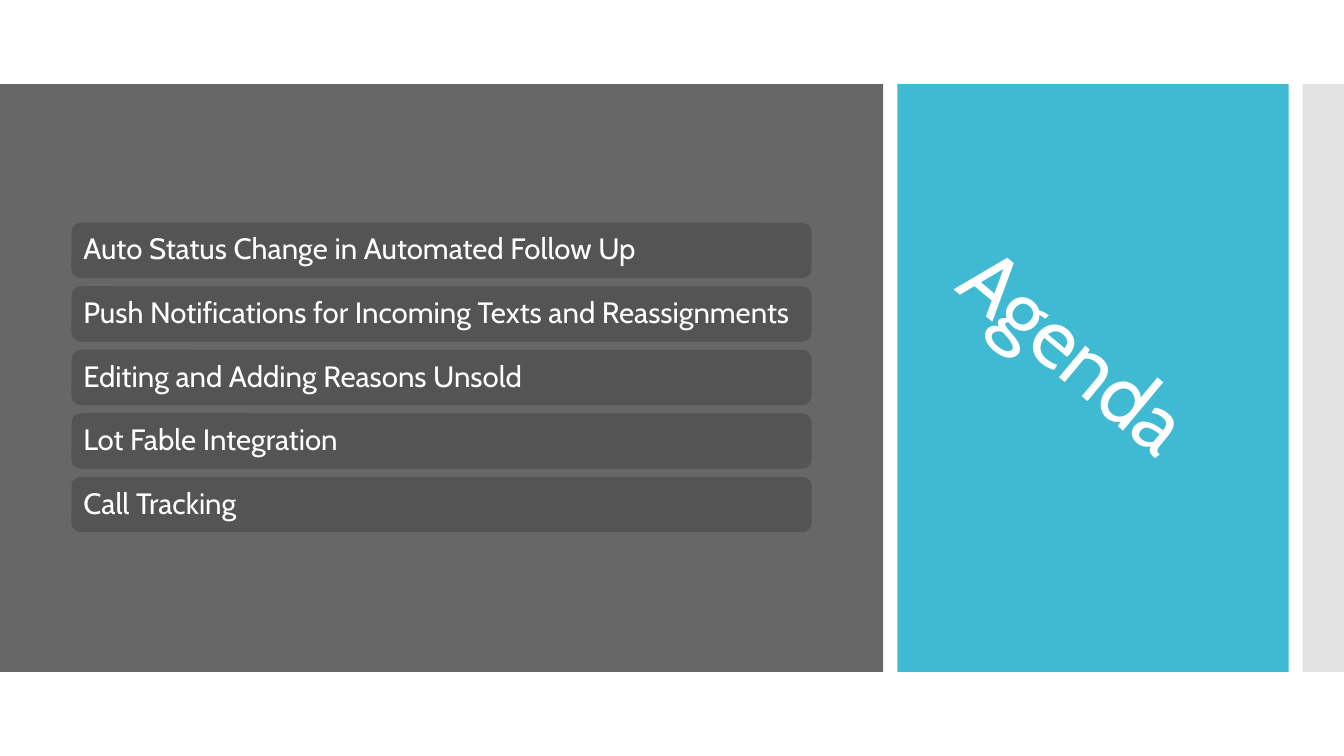
from dataclasses import dataclass

from lxml.etree import SubElement
from pptx import Presentation
from pptx.dml.color import RGBColor
from pptx.enum.shapes import MSO_SHAPE as Preset
from pptx.enum.text import MSO_ANCHOR as Anchor, PP_ALIGN as Align
from pptx.oxml.ns import qn
from pptx.shapes.autoshape import Shape
from pptx.slide import Slide
from pptx.util import Inches, Pt

SLIDE_WIDTH, SLIDE_HEIGHT = 13.33, 7.5
BAND_TOP, BAND_HEIGHT = SLIDE_HEIGHT / 9, SLIDE_HEIGHT * 7 / 9
TOPIC_LEFT, TOPIC_TOP = 0.71, 2.21
TOPIC_WIDTH, TOPIC_HEIGHT, TOPIC_PITCH = 7.34, 0.55, 0.63
WHITE, FONT = "FFFFFF", "Cabin"


@dataclass(frozen=True)
class Panel:
    left: float
    width: float
    color: str
    opacity: int = 100


PANELS = [
    Panel(0, 8.76, "676767"),
    Panel(8.9, 3.88, "40BAD2"),
    Panel(12.92, SLIDE_WIDTH - 12.92, "C8C8C8", 50),
]
TOPICS = [
    "Auto Status Change in Automated Follow Up",
    "Push Notifications for Incoming Texts and Reassignments",
    "Editing and Adding Reasons Unsold",
    "Lot Fable Integration",
    "Call Tracking",
]


def rgb(color: str) -> RGBColor:
    return RGBColor.from_string(color)


def add_block(slide: Slide, preset: Preset, left: float, top: float,
              width: float, height: float, color: str) -> Shape:
    block = slide.shapes.add_shape(
        preset, Inches(left), Inches(top), Inches(width), Inches(height))
    block.shadow.inherit = False
    block.fill.solid()
    block.fill.fore_color.rgb = rgb(color)
    block.line.fill.background()
    return block


def write(shape: Shape, text: str, size: float) -> None:
    frame = shape.text_frame
    frame.word_wrap = True
    frame.vertical_anchor = Anchor.MIDDLE
    paragraph = frame.paragraphs[0]
    paragraph.text = text
    paragraph.alignment = Align.LEFT
    paragraph.line_spacing = 0.9
    paragraph.font.name = FONT
    paragraph.font.size = Pt(size)
    paragraph.font.color.rgb = rgb(WHITE)


def add_panel(slide: Slide, panel: Panel) -> None:
    block = add_block(slide, Preset.RECTANGLE, panel.left, BAND_TOP,
                      panel.width, BAND_HEIGHT, panel.color)
    if panel.opacity < 100:
        fill_color = block.fill._xPr.find(qn("a:solidFill"))[0]
        SubElement(fill_color, qn("a:alpha"), val=str(panel.opacity * 1000))


def add_topic(slide: Slide, row: int, text: str) -> None:
    bar = add_block(slide, Preset.ROUNDED_RECTANGLE, TOPIC_LEFT,
                    TOPIC_TOP + row * TOPIC_PITCH, TOPIC_WIDTH, TOPIC_HEIGHT,
                    "545454")
    write(bar, text, 21)
    bar.text_frame.margin_left = bar.text_frame.margin_right = Inches(0.09)


def add_title(slide: Slide, text: str) -> None:
    title = slide.shapes.add_textbox(
        Inches(9.18), Inches(3.17), Inches(3.22), Inches(0.92))
    title.rotation = 39.8
    write(title, text, 60)
    run = title.text_frame.paragraphs[0].runs[0]
    run._r.get_or_add_rPr().set("spc", "-60")


def main() -> None:
    deck = Presentation()
    deck.slide_width, deck.slide_height = Inches(SLIDE_WIDTH), Inches(SLIDE_HEIGHT)
    slide = deck.slides.add_slide(deck.slide_layouts[6])
    slide.background.fill.solid()
    slide.background.fill.fore_color.rgb = rgb(WHITE)
    for panel in PANELS:
        add_panel(slide, panel)
    add_title(slide, "Agenda")
    for row, topic in enumerate(TOPICS):
        add_topic(slide, row, topic)
    deck.save("out.pptx")


if __name__ == "__main__":
    main()
